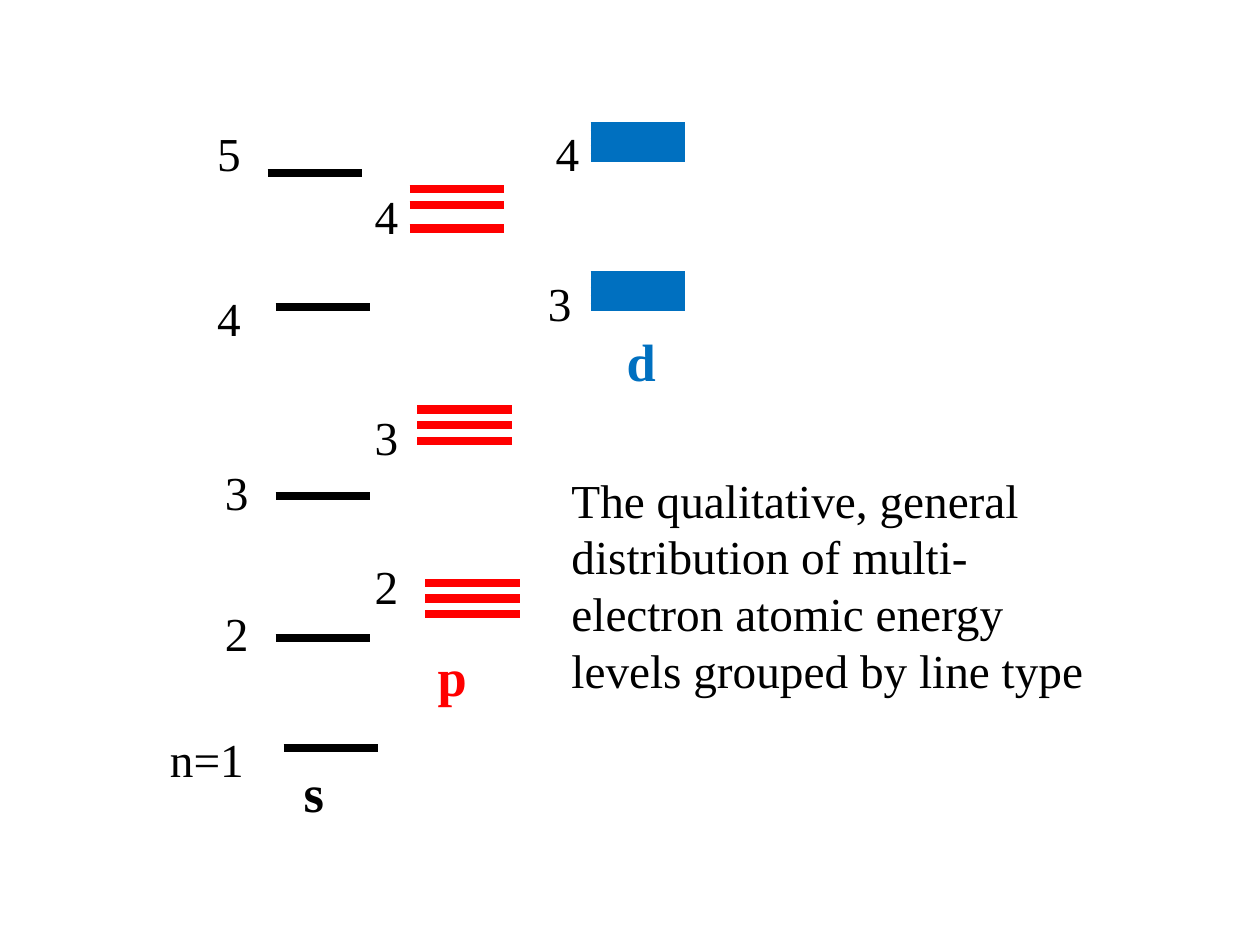
from pptx import Presentation
from pptx.dml.color import RGBColor
from pptx.enum.shapes import MSO_CONNECTOR
from pptx.enum.text import MSO_AUTO_SIZE
from pptx.oxml.ns import qn
from pptx.util import Emu, Pt
from lxml import etree

STRAIGHT = MSO_CONNECTOR.STRAIGHT
GROW = MSO_AUTO_SIZE.SHAPE_TO_FIT_TEXT
EMU_PER_PX = 9525
FONT = "Times New Roman"
BLACK, RED, BLUE = "000000", "FF0000", "0070C0"
LEVEL_WIDTH = 72
LABEL_HEIGHT = 54

# Each level: label, label left, label top, line left, line heights
SUBSHELLS = [
    ("s", 222, 574, BLACK, [
        ("n=1", 120, 552, 216, [570]),
        ("2", 162, 456, 210, [486]),
        ("3", 162, 348, 210, [378]),
        ("4", 156, 216, 210, [234]),
        ("5", 156, 90, 204, [132]),
    ]),
    ("p", 324, 486, RED, [
        ("2", 276, 420, 324, range(444, 469, 12)),
        ("3", 276, 306, 318, range(312, 337, 12)),
        ("4", 276, 138, 312, [144, 156, 174]),
    ]),
    ("d", 468, 246, BLUE, [
        ("3", 408, 204, 450, range(210, 235, 6)),
        ("4", 414, 90, 450, range(96, 121, 6)),
    ]),
]
CAPTION = ("The qualitative, general distribution of multi-electron "
           "atomic energy levels grouped by line type")


def px(value):
    return Emu(value * EMU_PER_PX)


def color(hex_string):
    return RGBColor.from_string(hex_string)


def add_text(slide, text, left, top, width, height,
             size=27, text_color=BLACK, bold=False):
    box = slide.shapes.add_textbox(px(left), px(top), px(width), px(height))
    frame = box.text_frame
    frame.word_wrap = True
    frame.auto_size = GROW
    frame.text = text
    font = frame.paragraphs[0].runs[0].font
    font.name = FONT
    font.size = Pt(size)
    font.bold = bold
    font.color.rgb = color(text_color)


def add_level_line(slide, left, y, line_color):
    line = slide.shapes.add_connector(
        STRAIGHT, px(left), px(y), px(left + LEVEL_WIDTH), px(y))
    line.line.color.rgb = color(line_color)
    line.line.width = Pt(4.75)
    etree.SubElement(line._element.spPr, qn("a:effectLst"))


def add_subshell(slide, name, left, top, line_color, levels):
    """Draw one column of labelled energy levels and its name."""
    for label, label_left, label_top, line_left, heights in levels:
        for y in heights:
            add_level_line(slide, line_left, y, line_color)
        label_width = 84 if len(label) > 1 else 30
        add_text(slide, label, label_left, label_top, label_width, LABEL_HEIGHT)
    add_text(slide, name, left, top, 66, 59, 30, line_color, True)


def main():
    presentation = Presentation()
    presentation.slide_width = px(960)
    presentation.slide_height = px(720)
    slide = presentation.slides.add_slide(presentation.slide_layouts[6])
    for subshell in SUBSHELLS:
        add_subshell(slide, *subshell)
    add_text(slide, CAPTION, 426, 354, 414, 184)
    presentation.save("out.pptx")


if __name__ == "__main__":
    main()
